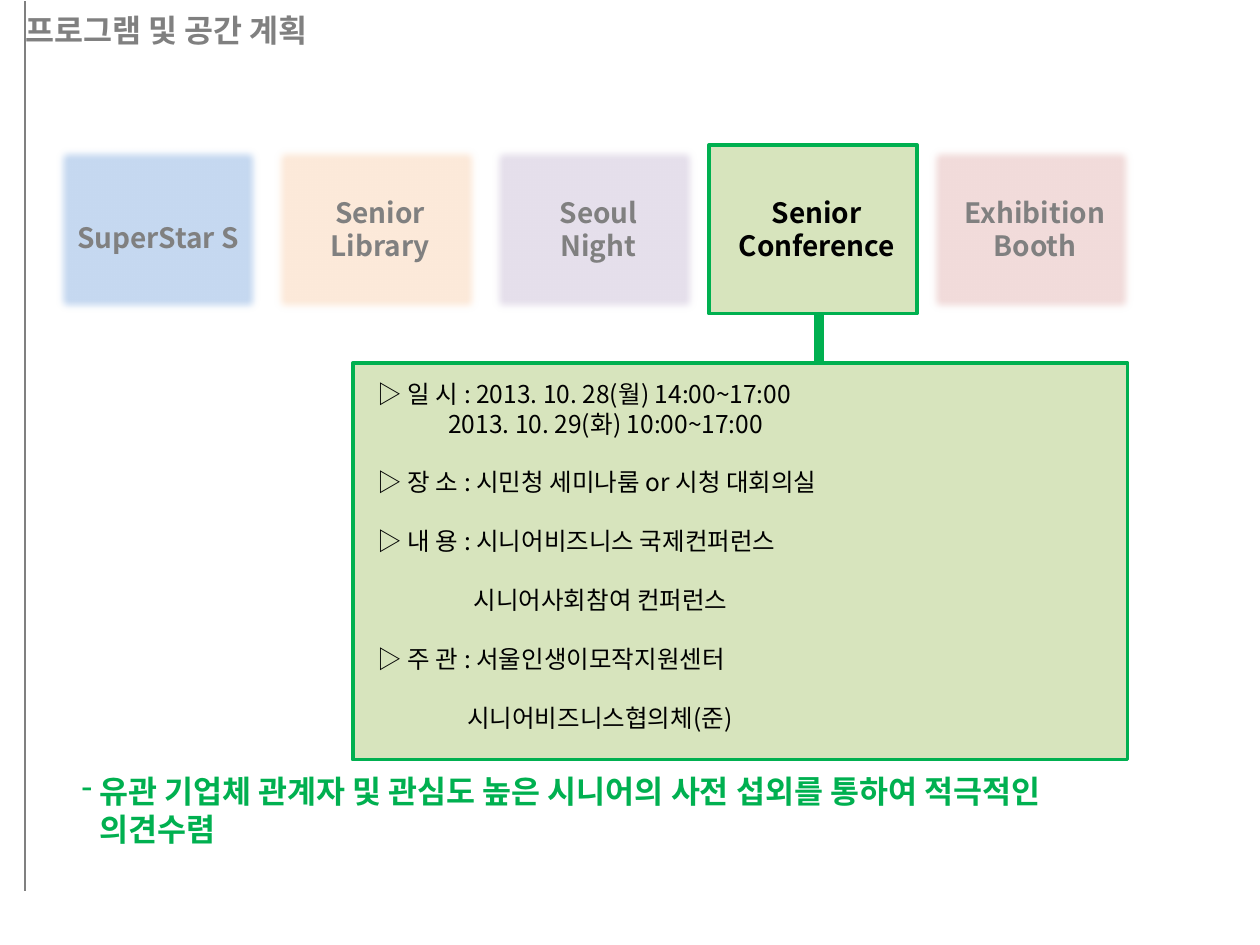
from dataclasses import dataclass

from lxml import etree
from pptx import Presentation
from pptx.dml.color import RGBColor
from pptx.enum.shapes import MSO_CONNECTOR, MSO_SHAPE
from pptx.enum.text import MSO_ANCHOR, PP_ALIGN
from pptx.oxml.ns import qn
from pptx.util import Inches, Pt

RECTANGLE = MSO_SHAPE.RECTANGLE
STRAIGHT = MSO_CONNECTOR.STRAIGHT
LEFT, CENTER = PP_ALIGN.LEFT, PP_ALIGN.CENTER
TOP, MIDDLE = MSO_ANCHOR.TOP, MSO_ANCHOR.MIDDLE


@dataclass(frozen=True)
class Theme:
    font: str = "Noto Sans CJK KR"
    grey: str = "808080"
    black: str = "000000"
    green: str = "00B050"
    pale_green: str = "D7E4BD"
    heading: int = 18
    label: int = 16
    body: int = 14
    leading: float = 1.2


THEME = Theme()

# Name lines, fill, outline, active
PROGRAMS = [
    (["SuperStar S"], "C6D9F1", "0070C0", False),
    (["Senior", "Library"], "FDEADA", "E46C0A", False),
    (["Seoul", "Night"], "E6E0EC", "7030A0", False),
    (["Senior Conference"], THEME.pale_green, THEME.green, True),
    (["Exhibition", "Booth"], "F2DCDB", "FF0000", False),
]

# Text, left indent in inches, blank lines before
DETAILS = [
    ("▷ 일 시 : 2013. 10. 28(월) 14:00~17:00", 0, 0),
    ("2013. 10. 29(화) 10:00~17:00", 0.56, 0),
    ("▷ 장 소 : 시민청 세미나룸 or 시청 대회의실", 0, 1),
    ("▷ 내 용 : 시니어비즈니스 국제컨퍼런스", 0, 1),
    ("시니어사회참여 컨퍼런스", 0.76, 1),
    ("▷ 주 관 : 서울인생이모작지원센터", 0, 1),
    ("시니어비즈니스협의체(준)", 0.71, 1),
]


def write(para, text, *, size, color, bold=False, align=LEFT, indent=0,
          hanging=0, bullet=None, before=0):
    """Fill one paragraph with formatted text."""
    props = para._p.get_or_add_pPr()
    props.set("marL", str(Inches(indent)))
    props.set("indent", str(-Inches(hanging)))
    if bullet:
        etree.SubElement(props, qn("a:buChar")).set("char", bullet)
    para.alignment = align
    para.line_spacing = Pt(size * THEME.leading)
    para.space_before = Pt(before)
    span = para.add_run()
    span.text = text
    font = span.font
    font.name, font.size, font.bold = THEME.font, Pt(size), bold
    font.color.rgb = RGBColor.from_string(color)
    for tag in ("a:ea", "a:cs"):
        etree.SubElement(span._r.get_or_add_rPr(), qn(tag)).set("typeface", THEME.font)


def add_paragraph(frame, index):
    return frame.paragraphs[0] if index == 0 else frame.add_paragraph()


def add_text_box(page, box, anchor=TOP):
    frame = page.shapes.add_textbox(*map(Inches, box)).text_frame
    frame.word_wrap = True
    frame.vertical_anchor = anchor
    return frame


def add_panel(page, box, fill, outline, soft_edge=0):
    panel = page.shapes.add_shape(RECTANGLE, *map(Inches, box))
    panel.shadow.inherit = False
    panel.fill.solid()
    panel.fill.fore_color.rgb = RGBColor.from_string(fill)
    panel.line.color.rgb = RGBColor.from_string(outline)
    panel.line.width = Pt(2)
    if soft_edge:
        effects = panel._element.spPr.find(qn("a:effectLst"))
        etree.SubElement(effects, qn("a:softEdge")).set("rad", str(Pt(soft_edge)))


def add_rule(page, start, end, color, width):
    rule = page.shapes.add_connector(STRAIGHT, *map(Inches, start + end))
    rule.line.color.rgb = RGBColor.from_string(color)
    rule.line.width = Pt(width)
    etree.SubElement(rule._element.spPr, qn("a:effectLst"))


def place_title(page, box):
    title = page.shapes.title
    title.left, title.top, title.width, title.height = map(Inches, box)
    frame = title.text_frame
    frame.margin_left = frame.margin_right = 0
    frame.vertical_anchor = MIDDLE
    write(frame.paragraphs[0], "프로그램 및 공간 계획",
          size=THEME.heading, color=THEME.grey, bold=True)


def place_programs(page, box):
    """Row of equal tiles; every tile but the active one is faded."""
    left, top, width, height = box
    tile_width = 1.65
    pitch = (width - tile_width) / (len(PROGRAMS) - 1)
    for index, (lines, fill, outline, active) in enumerate(PROGRAMS):
        x = left + index * pitch
        add_panel(page, (x, top, tile_width, height), fill, outline,
                  soft_edge=0 if active else 5)
        single = lines == ["SuperStar S"]
        label_box = (x - 0.06, top + 0.55, 1.77, 0.37) if single else (
            x - 0.03, top + 0.35, 1.77, 0.64)
        frame = add_text_box(page, label_box)
        for number, line in enumerate(lines):
            write(add_paragraph(frame, number), line, size=THEME.label, bold=True,
                  color=THEME.black if active else THEME.grey, align=CENTER)


def place_details(page, box):
    left, top, width, height = box
    add_panel(page, box, THEME.pale_green, THEME.green)
    add_rule(page, (6.5, top), (6.5, 2.49), THEME.green, 6)
    frame = add_text_box(page, (left + 0.1, top + 0.08, width - 0.34, height - 0.22))
    for index, (text, indent, blanks) in enumerate(DETAILS):
        write(add_paragraph(frame, index), text, size=THEME.body, color=THEME.black,
              indent=indent, before=blanks * THEME.body * THEME.leading)


def place_summary(page, box):
    frame = add_text_box(page, box, MIDDLE)
    style = dict(size=THEME.heading, color=THEME.green, bold=True, indent=0.14)
    write(frame.paragraphs[0],
          "유관 기업체 관계자 및 관심도 높은 시니어의 사전 섭외를 통하여 적극적인",
          bullet="-", hanging=0.14, **style)
    write(frame.add_paragraph(), "의견수렴", **style)


def main():
    deck = Presentation()
    deck.slide_width, deck.slide_height = Inches(10), Inches(7.5)
    page = deck.slides.add_slide(deck.slide_layouts[5])
    add_rule(page, (0.2, 0.01), (0.2, 7.07), THEME.grey, 1.25)
    place_title(page, (0.2, 0.04, 3.99, 0.39))
    place_programs(page, (0.43, 1.15, 8.58, 1.34))
    place_details(page, (2.8, 2.88, 6.15, 3.15))
    place_summary(page, (0.55, 6.03, 9.4, 0.79))
    deck.save("out.pptx")


if __name__ == "__main__":
    main()
